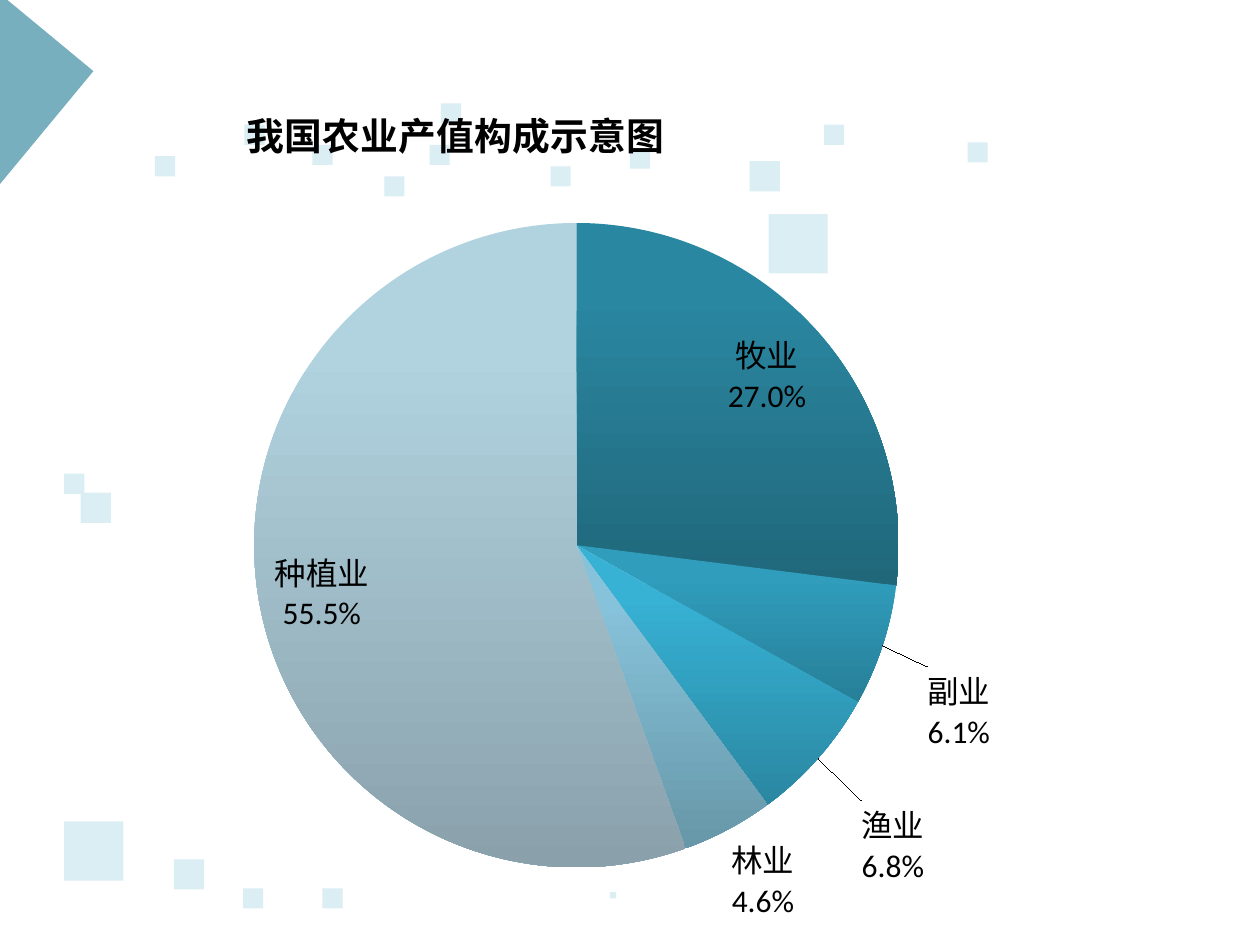
from lxml import etree
from pptx import Presentation
from pptx.chart.data import CategoryChartData
from pptx.dml.color import RGBColor
from pptx.enum.chart import XL_CHART_TYPE, XL_LABEL_POSITION
from pptx.enum.shapes import MSO_SHAPE
from pptx.oxml import parse_xml
from pptx.oxml.ns import nsdecls, qn
from pptx.util import Inches, Pt

RECT = MSO_SHAPE.RECTANGLE
PIE = XL_CHART_TYPE.PIE
BEST_FIT = XL_LABEL_POSITION.BEST_FIT

# The slide is a grid of 100 columns by 75 rows
CELL = Inches(0.1)
PALE, TEAL, BLACK = "DBEEF4", "31859C", "000000"
FONT = "Calibri"
TITLE = "我国农业产值构成示意图"

# Side of a square -> its (column, row) positions
SQUARES = {
    4.7: [(5.1, 65.2), (61, 17)],
    2.4: [(13.8, 68.2), (6.4, 39.1), (59.5, 12.8)],
    1.6: [(25.6, 70.5), (19.3, 70.5), (65.4, 9.9), (50, 11.8), (34.1, 11.5),
          (24.8, 11.5), (35, 8.2), (43.7, 13.2), (30.5, 14), (5.1, 37.6),
          (76.8, 11.3), (12.3, 12.4), (19.4, 9.9)],
    0.5: [(48.4, 70.8)],
}

# Category, value, gradient top and bottom, shift of the label
SLICES = [
    ("牧业", 27, "2A87A1", "20677A", None),
    ("副业", 6.1, "309DBC", "277F98", (0.03, 0.02)),
    ("渔业", 6.8, "37B1D4", "2A87A1", (0.03, 0.04)),
    ("林业", 4.6, "86C2DA", "6797A8", None),
    ("种植业", 55.5, "B0D3DF", "8AA1AC", None),
]


def rgb(value):
    return RGBColor.from_string(value)


def add_square(slide, col, row, side, color):
    sp = slide.shapes.add_shape(
        RECT, *(round(n * CELL) for n in (col, row, side, side)))
    sp.shadow.inherit = False
    sp.fill.solid()
    sp.fill.fore_color.rgb = rgb(color)
    sp.line.fill.background()
    return sp


def add_corner(slide):
    sp = add_square(slide, -21.6, -4.8, 24.1, TEAL)
    sp.rotation = 39.6
    color = sp.fill._xPr.find(".//" + qn("a:srgbClr"))
    etree.SubElement(color, qn("a:alpha"), val="65000")


def set_font(font, size, bold=False):
    font.name = FONT
    font.size = Pt(size)
    font.bold = bold
    font.color.rgb = rgb(BLACK)


def manual_layout(x, y, w=None, h=None, inner=False, edge=True):
    """Layout element in shares of the chart; without edge, x and y are shifts."""
    items = [("layoutTarget", "inner")] if inner else []
    if edge:
        items += [("xMode", "edge"), ("yMode", "edge")]
    items += [("x", x), ("y", y)]
    if w is not None:
        items += [("w", w), ("h", h)]
    body = "".join(f'<c:{tag} val="{val}"/>' for tag, val in items)
    return parse_xml(f'<c:layout {nsdecls("c")}><c:manualLayout>{body}'
                     "</c:manualLayout></c:layout>")


def place(element, layout, index):
    for old in element.findall(qn("c:layout")):
        element.remove(old)
    element.insert(index, layout)


def style_title(chart):
    title = chart.chart_title
    p = title.text_frame.paragraphs[0]
    p.text = TITLE
    set_font(p.font, 21.6, True)
    title.include_in_layout = False
    place(title._element, manual_layout(0.19, 0.1), 1)


def style_slice(point, top, bottom):
    fill = point.format.fill
    fill.gradient()
    fill.gradient_angle = 270
    for stop, color, pos in zip(fill.gradient_stops, (top, bottom), (0.2, 1)):
        stop.color.rgb = rgb(color)
        stop.position = pos
    point.format.line.fill.background()


def style_labels(series):
    labels = series.data_labels
    set_font(labels.font, 18)
    labels.number_format = "0.0%"
    labels.number_format_is_linked = False
    labels.position = BEST_FIT
    labels.show_value = False
    labels.show_category_name = True
    labels.show_percentage = True
    root = labels._element
    separator = parse_xml(f'<c:separator {nsdecls("c")}>\n</c:separator>')
    flags = [el for el in root if el.tag in (qn("c:showPercent"), qn("c:showBubbleSize"))]
    flags[-1].addnext(separator)
    for leader in root.findall(qn("c:showLeaderLines")):
        leader.set("val", "1")
    shifted = [(i, item[-1]) for i, item in enumerate(SLICES) if item[-1]]
    for n, (i, shift) in enumerate(shifted):
        root.insert(n, shifted_label(i, shift))


def shifted_label(index, shift):
    flags = "".join(
        f'<c:show{name} val="{int(name in ("CatName", "Percent"))}"/>'
        for name in ("LegendKey", "Val", "CatName", "SerName", "Percent", "BubbleSize"))
    label = parse_xml(
        f'<c:dLbl {nsdecls("c")}><c:idx val="{index}"/>'
        f'<c:dLblPos val="bestFit"/>{flags}<c:separator>\n</c:separator></c:dLbl>')
    place(label, manual_layout(*shift, edge=False), 1)
    return label


def add_pie(slide):
    data = CategoryChartData()
    data.categories = [item[0] for item in SLICES]
    data.add_series(TITLE, [item[1] for item in SLICES])
    chart = slide.shapes.add_chart(PIE, 0, 0, 100 * CELL, 75 * CELL, data).chart
    set_font(chart.font, 18)
    chart.has_legend = False
    style_title(chart)
    plot = chart.plots[0]
    plot.vary_by_categories = True
    series = plot.series[0]
    for i, (_, _, top, bottom, _) in enumerate(SLICES):
        style_slice(series.points[i], top, bottom)
    style_labels(series)
    area = chart._chartSpace.find(".//" + qn("c:plotArea"))
    place(area, manual_layout(0.086, 0.236, 0.743, 0.682, inner=True), 0)


def main():
    prs = Presentation()
    prs.slide_width, prs.slide_height = 100 * CELL, 75 * CELL
    slide = prs.slides.add_slide(prs.slide_layouts[6])
    for side, spots in SQUARES.items():
        for col, row in spots:
            add_square(slide, col, row, side, PALE)
    add_corner(slide)
    add_pie(slide)
    prs.save("out.pptx")


if __name__ == "__main__":
    main()
